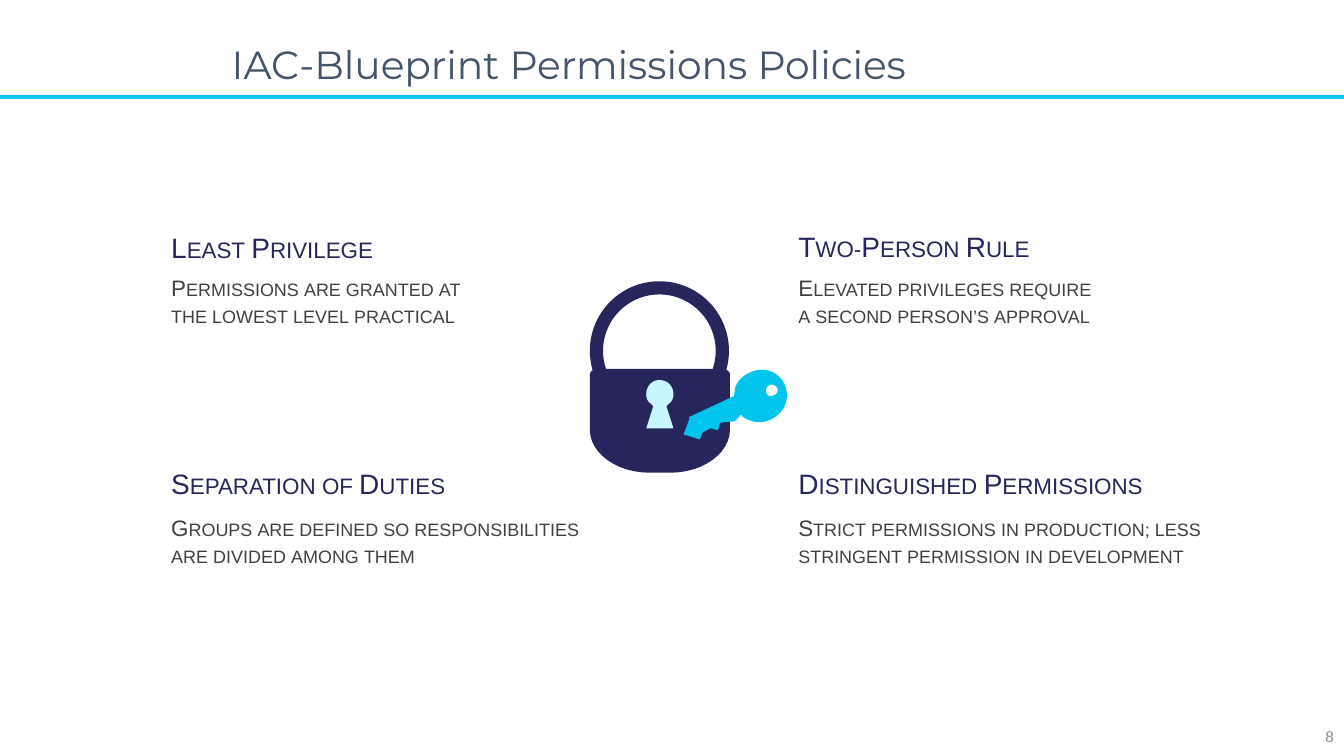
from lxml import etree
from pptx import Presentation
from pptx import util as u
from pptx.dml.color import RGBColor
from pptx.enum import shapes, text
from pptx.oxml.ns import qn

NAVY = RGBColor(0x26, 0x26, 0x5C)
CYAN = RGBColor(0x00, 0xC4, 0xEC)
PALE = RGBColor(0xC8, 0xF6, 0xFF)
SLATE = RGBColor(0x44, 0x54, 0x6A)
DARK = RGBColor(0x40, 0x40, 0x40)
GREY = RGBColor(0x8C, 0x8C, 0x8C)
CURVE_STEPS = 12

presentation = Presentation()
presentation.slide_width = u.Inches(13.33)
presentation.slide_height = u.Inches(7.5)
slide = presentation.slides.add_slide(presentation.slide_layouts[6])


def add_text(words, left, top, width, height, size, color, font="Arial", wrap=True, small=False):
    box = slide.shapes.add_textbox(*(u.Inches(v) for v in (left, top, width, height)))
    box.text_frame.word_wrap = wrap
    box.text_frame.auto_size = text.MSO_AUTO_SIZE.SHAPE_TO_FIT_TEXT
    paragraph = box.text_frame.paragraphs[0]
    paragraph.text = words
    paragraph.font.name = font
    paragraph.font.size = u.Pt(size)
    paragraph.font.color.rgb = color
    if small:
        paragraph._p.get_or_add_pPr().get_or_add_defRPr().set("cap", "small")
    return box


def add_outline(contours, color):
    builder = None
    for start, *segments in contours:
        points, pen = [], start
        for segment in segments:
            if len(segment) == 2:
                points.append(segment)
            else:
                controls = (pen, segment[:2], segment[2:4], segment[4:])
                for step in range(1, CURVE_STEPS + 1):
                    t = step / CURVE_STEPS
                    weights = ((1 - t) ** 3, 3 * t * (1 - t) ** 2, 3 * t * t * (1 - t), t ** 3)
                    points.append(tuple(sum(w * c[axis] for w, c in zip(weights, controls)) for axis in (0, 1)))
            pen = segment[-2:]
        origin = [u.Inches(v) for v in start]
        if builder is None:
            builder = slide.shapes.build_freeform(*origin, scale=1.0)
        else:
            builder.move_to(*origin)
        builder.add_line_segments([(u.Inches(x), u.Inches(y)) for x, y in points], close=True)
    shape = builder.convert_to_shape()
    shape.shadow.inherit = False
    shape.fill.solid()
    shape.fill.fore_color.rgb = color
    shape.line.fill.background()


rule = slide.shapes.add_connector(
    shapes.MSO_CONNECTOR.STRAIGHT, 0, u.Inches(0.96), presentation.slide_width, u.Inches(0.96))
rule.line.color.rgb = CYAN
rule.line.width = u.Pt(3)
etree.SubElement(rule._element.spPr, qn("a:effectLst"))

title = add_text("IAC-Blueprint Permissions Policies", 2.2, 0.4, 11, 0.53, 28, SLATE, "Montserrat")
title.text_frame.paragraphs[0].line_spacing = 0.9

number = add_text("8", 12.86, 7.11, 0.47, 0.39, 11, GREY)
number.text_frame.vertical_anchor = text.MSO_ANCHOR.MIDDLE
number.text_frame.margin_top = number.text_frame.margin_bottom = u.Inches(0.1)
number.text_frame.paragraphs[0].alignment = text.PP_ALIGN.RIGHT

add_outline([[
    (5.94, 3.66), (7.15, 3.66), (7.2, 3.66, 7.24, 3.68, 7.24, 3.72), (7.24, 4.26),
    (7.24, 4.5, 6.97, 4.69, 6.65, 4.69), (6.44, 4.69), (6.12, 4.69, 5.85, 4.5, 5.85, 4.26),
    (5.85, 3.72), (5.85, 3.68, 5.89, 3.66, 5.94, 3.66)]], NAVY)

shackle = slide.shapes.add_shape(
    shapes.MSO_SHAPE.DONUT, u.Inches(5.85), u.Inches(2.79), u.Inches(1.38), u.Inches(1.38))
shackle.adjustments[0] = 0.095
shackle.shadow.inherit = False
shackle.fill.solid()
shackle.fill.fore_color.rgb = NAVY
shackle.line.fill.background()

add_outline([[
    (6.54, 3.77), (6.62, 3.77, 6.68, 3.83, 6.68, 3.91), (6.68, 3.94, 6.67, 3.98, 6.64, 4),
    (6.61, 4.03), (6.68, 4.25), (6.41, 4.25), (6.48, 4.03), (6.45, 4),
    (6.42, 3.98, 6.41, 3.94, 6.41, 3.91), (6.41, 3.83, 6.47, 3.77, 6.54, 3.77)]], PALE)

policies = [
    ("Least Privilege", 1.6, 2.24, 2.24,
     "Permissions are granted at the lowest level practical", 2.67, 3.12),
    ("Separation of Duties", 1.6, 4.58, 2.98,
     "Groups are defined so responsibilities are divided among them", 5.05, 4.37),
    ("Two-Person Rule", 7.82, 2.23, 2.55,
     "Elevated privileges require a second person’s approval", 2.67, 3.12),
    ("Distinguished Permissions", 7.82, 4.58, 3.67,
     "Strict permissions in production; less stringent permission in development", 5.05, 4.37),
]
for heading, left, heading_top, heading_width, detail, detail_top, detail_width in policies:
    add_text(heading, left, heading_top, heading_width, 0.44, 20, NAVY, wrap=False, small=True)
    add_text(detail, left, detail_top, detail_width, 0.64, 16, DARK, small=True)

key_eye = [
    (7.63, 3.82), (7.6, 3.84, 7.59, 3.87, 7.6, 3.9), (7.61, 3.93, 7.65, 3.94, 7.68, 3.92),
    (7.71, 3.91, 7.72, 3.87, 7.71, 3.85), (7.69, 3.82, 7.66, 3.81, 7.63, 3.82)]
key_body = [
    (7.43, 3.7), (7.56, 3.63, 7.72, 3.68, 7.78, 3.81), (7.84, 3.94, 7.79, 4.09, 7.65, 4.16),
    (7.55, 4.21, 7.44, 4.19, 7.36, 4.13), (7.35, 4.11), (7.29, 4.18), (7.17, 4.19), (7.14, 4.2),
    (7.12, 4.27), (7.05, 4.25), (6.97, 4.29), (6.94, 4.36), (6.78, 4.31), (6.84, 4.15),
    (6.83, 4.14), (7.28, 3.93), (7.29, 3.85), (7.31, 3.79, 7.36, 3.73, 7.43, 3.7)]
add_outline([key_eye, key_body], CYAN)

presentation.save("out.pptx")
